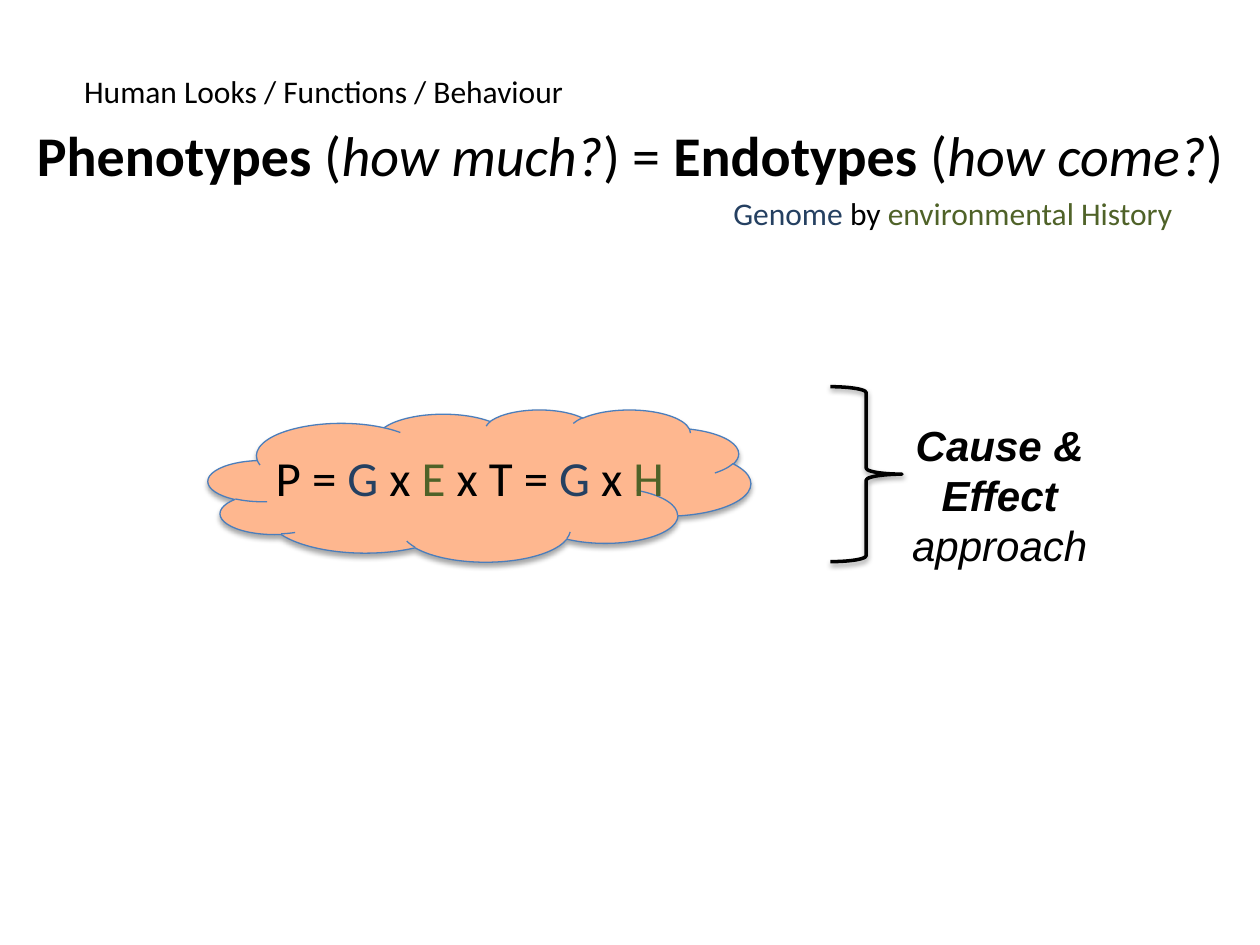
import pptx
import pptx.util
import pptx.dml.color
import pptx.enum.shapes
import pptx.enum.text
import pptx.oxml
import pptx.oxml.ns

Pt = pptx.util.Pt
SHAPES = pptx.enum.shapes.MSO_SHAPE
ALIGN = pptx.enum.text.PP_ALIGN
ANCHOR = pptx.enum.text.MSO_ANCHOR
AUTOSIZE = pptx.enum.text.MSO_AUTO_SIZE
BLACK, GENOME_BLUE, HISTORY_GREEN = "000000", "254061", "4F6228"


def write_runs(paragraph, runs, font_name, size):
    """Each run is (text, colour, extra font values)."""
    for text, colour, extras in runs:
        run = paragraph.add_run()
        run.text = text
        run.font.color.rgb = pptx.dml.color.RGBColor.from_string(colour)
        values = {"name": font_name, "size": Pt(size), "bold": False, "italic": False}
        for key, value in (values | extras).items():
            setattr(run.font, key, value)


def add_soft_shadow(shape, alpha, distance):
    shape.shadow.inherit = False
    effects = shape._element.spPr.find(pptx.oxml.ns.qn("a:effectLst"))
    effects.append(pptx.oxml.parse_xml(
        f'<a:outerShdw {pptx.oxml.ns.nsdecls("a")} blurRad="{Pt(3.1)}" '
        f'dist="{Pt(distance)}" dir="5400000" rotWithShape="0">'
        f'<a:srgbClr val="000000"><a:alpha val="{alpha * 1000}"/></a:srgbClr>'
        '</a:outerShdw>'))


presentation = pptx.Presentation()
presentation.slide_width, presentation.slide_height = Pt(720), Pt(540)
slide = presentation.slides.add_slide(presentation.slide_layouts[5])

# Title equation, set slightly below the middle of its box
title = slide.shapes.title
for key, value in {"left": 0, "top": 37.5, "width": 720, "height": 90}.items():
    setattr(title, key, Pt(value))
title_format = {"auto_size": AUTOSIZE.NONE, "word_wrap": True,
                "vertical_anchor": ANCHOR.MIDDLE, "margin_top": Pt(15)}
for key, value in title_format.items():
    setattr(title.text_frame, key, value)
title_line = title.text_frame.paragraphs[0]
title_line.alignment = ALIGN.CENTER
bold, italic = {"bold": True}, {"italic": True}
write_runs(title_line, [
    ("Phenotypes ", BLACK, bold), ("(", BLACK, {}), ("how much?", BLACK, italic),
    (") = ", BLACK, {}), ("Endotypes ", BLACK, bold), ("(", BLACK, {}),
    ("how come?", BLACK, italic), (")", BLACK, {})], "Calibri", 32)

# Cloud behind the formula, and brace before the approach
outlines = [
    (SHAPES.CLOUD, (119, 234, 310, 87), "FEB78F", "4B7EBC", 0.75, 35, 1.8),
    (SHAPES.RIGHT_BRACE, (474.5, 221, 41, 100), None, BLACK, 2, 38, 1.6),
]
for preset, box, fill, line, weight, alpha, distance in outlines:
    outline = slide.shapes.add_shape(preset, *map(Pt, box))
    if fill:
        outline.fill.solid()
        outline.fill.fore_color.rgb = pptx.dml.color.RGBColor.from_string(fill)
    else:
        outline.fill.background()
    outline.line.color.rgb = pptx.dml.color.RGBColor.from_string(line)
    outline.line.width = Pt(weight)
    add_soft_shadow(outline, alpha, distance)

# Text boxes: box, wrap, alignment, font, size, runs
strong = {"bold": True, "italic": True}
labels = [
    ((412, 107.5, 268.5, 29), False, ALIGN.LEFT, "Calibri", 18,
     [("Genome ", GENOME_BLUE, {}), ("by ", BLACK, {}),
      ("environmental History", HISTORY_GREEN, {})]),
    ((41, 37.5, 291.5, 29), False, ALIGN.LEFT, "Calibri", 18,
     [("Human Looks / Functions / Behaviour", BLACK, {})]),
    ((150.5, 252, 252, 41), False, ALIGN.LEFT, "Calibri", 28,
     [("P = ", BLACK, {}), ("G", GENOME_BLUE, {}), (" x ", BLACK, {}),
      ("E", HISTORY_GREEN, {}), (" x T = ", BLACK, {}), ("G", GENOME_BLUE, {}),
      (" x ", BLACK, {}), ("H", HISTORY_GREEN, {})]),
    ((501, 236, 140.5, 94.5), True, ALIGN.CENTER, "Arial", 24,
     [("Cause & Effect ", BLACK, strong), ("approach", BLACK, italic)]),
]
for box, wrap, alignment, font_name, size, runs in labels:
    label = slide.shapes.add_textbox(*map(Pt, box)).text_frame
    label.word_wrap = wrap
    label.auto_size = AUTOSIZE.SHAPE_TO_FIT_TEXT
    label.paragraphs[0].alignment = alignment
    write_runs(label.paragraphs[0], runs, font_name, size)

presentation.save("out.pptx")
